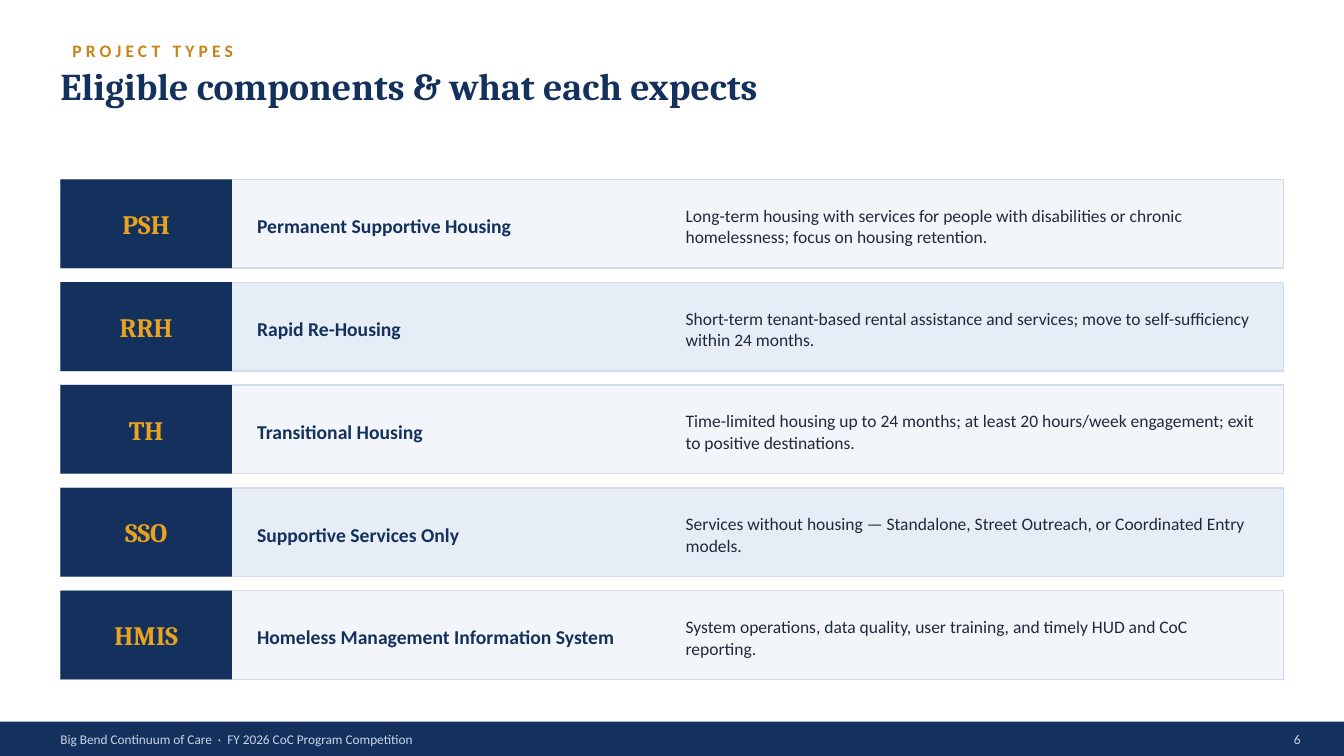
from pptx import Presentation
from pptx.dml.color import RGBColor
from pptx.enum.shapes import MSO_SHAPE
from pptx.enum.text import MSO_ANCHOR, MSO_AUTO_SIZE, PP_ALIGN
from pptx.util import Inches, Pt

SLIDE_W, SLIDE_H = 13.33, 7.5
MARGIN = 0.6
HEAD_FONT, BODY_FONT = "Cambria", "Calibri"
NAVY, GOLD, OCHRE, INK = "13315C", "E8A31F", "C6851A", "1E2A3A"
PALE, TINT, BORDER, FOOTER_TEXT = "F2F5FA", "E7EDF6", "D3DCEA", "C9D6EA"

COMPONENTS = [
    ("PSH", "Permanent Supportive Housing",
     "Long-term housing with services for people with disabilities or chronic "
     "homelessness; focus on housing retention."),
    ("RRH", "Rapid Re-Housing",
     "Short-term tenant-based rental assistance and services; move to "
     "self-sufficiency within 24 months."),
    ("TH", "Transitional Housing",
     "Time-limited housing up to 24 months; at least 20 hours/week engagement; "
     "exit to positive destinations."),
    ("SSO", "Supportive Services Only",
     "Services without housing — Standalone, Street Outreach, or Coordinated "
     "Entry models."),
    ("HMIS", "Homeless Management Information System",
     "System operations, data quality, user training, and timely HUD and CoC "
     "reporting."),
]


def rgb(value):
    return RGBColor.from_string(value)


def write(sp, text, size, color, font=BODY_FONT, bold=False,
          align=PP_ALIGN.LEFT, anchor=MSO_ANCHOR.MIDDLE, inset=0):
    """Put one formatted run in a shape; return its paragraph and run."""
    tf = sp.text_frame
    tf.word_wrap = True
    tf.auto_size = MSO_AUTO_SIZE.NONE
    tf.vertical_anchor = anchor
    tf.margin_left = tf.margin_right = Inches(inset)
    tf.margin_top = tf.margin_bottom = Inches(inset / 2)
    p = tf.paragraphs[0]
    p.alignment = align
    r = p.add_run()
    r.text = text
    r.font.name, r.font.size, r.font.bold = font, Pt(size), bold
    r.font.color.rgb = rgb(color)
    return p, r


def add_text(slide, x, y, w, h, *args, **style):
    sp = slide.shapes.add_textbox(Inches(x), Inches(y), Inches(w), Inches(h))
    return write(sp, *args, **style)


def add_rect(slide, x, y, w, h, fill, line=None):
    sp = slide.shapes.add_shape(MSO_SHAPE.RECTANGLE, Inches(x), Inches(y),
                                Inches(w), Inches(h))
    sp.shadow.inherit = False
    sp.fill.solid()
    sp.fill.fore_color.rgb = rgb(fill)
    if line:
        sp.line.color.rgb = rgb(line)
        sp.line.width = Pt(1)
    else:
        sp.line.fill.background()
    return sp


def add_header(slide, x, y, w, kicker, title):
    _, r = add_text(slide, x + 0.02, y, 11, 0.32, kicker, 12.5, OCHRE,
                    bold=True, inset=0.1)
    r.font._element.set("spc", "300")
    sp = slide.shapes.title
    sp.left, sp.top = Inches(x), Inches(y + 0.28)
    sp.width, sp.height = Inches(w), Inches(0.85)
    write(sp, title, 27, NAVY, HEAD_FONT, bold=True, anchor=MSO_ANCHOR.TOP)


def add_component(slide, x, y, w, h, fill, code, name, expectation):
    add_rect(slide, x, y, w, h, fill, BORDER)
    tab = add_rect(slide, x, y, 1.7, h, NAVY)
    write(tab, code, 19, GOLD, HEAD_FONT, bold=True, align=PP_ALIGN.CENTER)
    add_text(slide, x + 1.95, y + 0.12, 4.1, h - 0.2, name, 14, NAVY, bold=True)
    p, _ = add_text(slide, x + 6.2, y + 0.1, w - 6.45, h - 0.16,
                    expectation, 12.5, INK)
    p.line_spacing = 1.03


def add_components(slide, x, y, w, row_h, gap):
    for i, component in enumerate(COMPONENTS):
        add_component(slide, x, y + i * (row_h + gap), w, row_h,
                      TINT if i % 2 else PALE, *component)


def add_footer(slide, y, h, text, number):
    add_rect(slide, 0, y, SLIDE_W, h, NAVY)
    add_text(slide, MARGIN, y, 9, h, text, 9.5, FOOTER_TEXT)
    add_text(slide, 12.4, y, 0.5, h, number, 9.5, FOOTER_TEXT,
             align=PP_ALIGN.RIGHT)


def main():
    prs = Presentation()
    prs.slide_width, prs.slide_height = Inches(SLIDE_W), Inches(SLIDE_H)
    slide = prs.slides.add_slide(prs.slide_layouts[5])
    slide.background.fill.solid()
    slide.background.fill.fore_color.rgb = rgb("FFFFFF")
    add_header(slide, MARGIN, 0.34, 12.1, "PROJECT TYPES",
               "Eligible components & what each expects")
    add_components(slide, MARGIN, 1.78, SLIDE_W - 2 * MARGIN, 0.88, 0.14)
    add_footer(slide, 7.16, 0.34,
               "Big Bend Continuum of Care  ·  FY 2026 CoC Program Competition",
               "6")
    prs.save("out.pptx")


if __name__ == "__main__":
    main()
